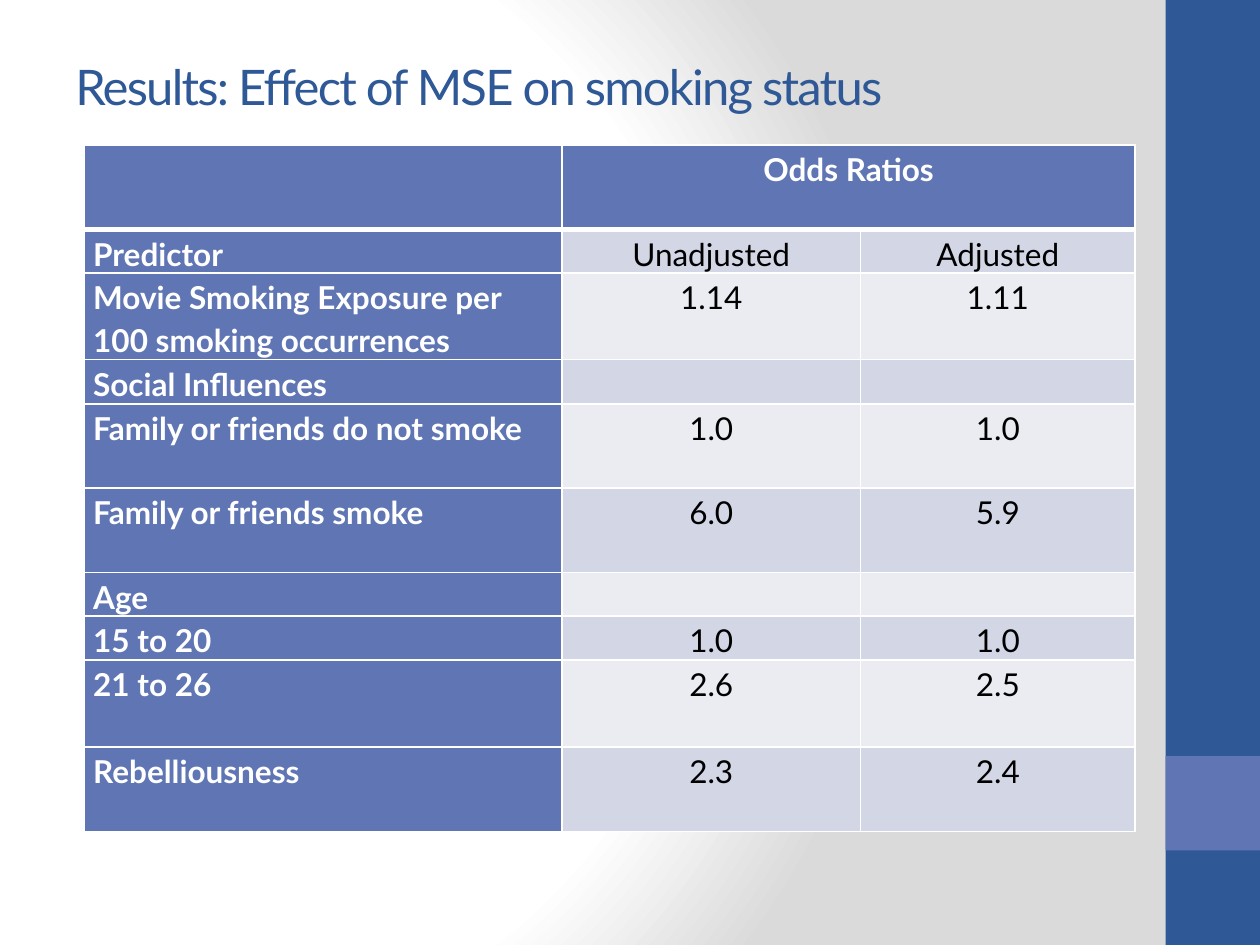
import pptx
import pptx.dml.color
import pptx.enum.shapes
import pptx.enum.text
import pptx.oxml
import pptx.oxml.ns
import pptx.util

Inches = pptx.util.Inches
ALIGN = pptx.enum.text.PP_ALIGN
NAMESPACES = pptx.oxml.ns.nsdecls("a", "p")
FONT = "Lato"
COLORS = {
    "navy": "2F5897",
    "blue": "6076B4",
    "band_dark": "D2D6E5",
    "band_light": "EAECF2",
    "white": "FFFFFF",
    "gray": "DADADA",
    "black": "000000",
}

COLUMN_WIDTHS = [3.79, 2.37, 2.18]
ROW_HEIGHTS = [0.67, 0.34, 0.69, 0.35, 0.67, 0.67, 0.34, 0.35, 0.69, 0.67]
ODDS_RATIOS = [
    ("", "Odds Ratios", ""),
    ("Predictor", "Unadjusted", "Adjusted"),
    ("Movie Smoking Exposure per 100 smoking occurrences", "1.14", "1.11"),
    ("Social Influences", "", ""),
    ("Family or friends do not smoke", "1.0", "1.0"),
    ("Family or friends smoke", "6.0", "5.9"),
    ("Age", "", ""),
    ("15 to 20", "1.0", "1.0"),
    ("21 to 26", "2.6", "2.5"),
    ("Rebelliousness", "2.3", "2.4"),
]


def rgb(name):
    return pptx.dml.color.RGBColor.from_string(COLORS[name])


def write_text(frame, text, size=18, color="black", bold=False, align=ALIGN.LEFT,
               line_spacing=None, tracking=None):
    """Fill the first paragraph; tracking is in hundredths of a point."""
    paragraph = frame.paragraphs[0]
    paragraph.alignment = align
    if line_spacing:
        paragraph.line_spacing = line_spacing
    run = paragraph.add_run()
    run.text = text
    run.font.name = FONT
    run.font.size = pptx.util.Pt(size)
    run.font.bold = bold
    run.font.color.rgb = rgb(color)
    if tracking:
        run.font._element.set("spc", str(tracking))


def set_borders(cell, top=1, bottom=1):
    """Draw white borders, with widths in points."""
    properties = cell._tc.get_or_add_tcPr()
    for side, width in {"L": 1, "R": 1, "T": top, "B": bottom}.items():
        properties.append(pptx.oxml.parse_xml(
            f'<a:ln{side} {NAMESPACES} w="{pptx.util.Pt(width)}"><a:solidFill>'
            f'<a:srgbClr val="{COLORS["white"]}"/></a:solidFill></a:ln{side}>'))


class SlideBuilder:
    def __init__(self, slide):
        self.slide = slide

    def add_background(self):
        stops = "".join(
            f'<a:gs pos="{position * 1000}"><a:srgbClr val="{COLORS[color]}"/></a:gs>'
            for position, color in [(0, "white"), (75, "white"), (100, "gray")])
        self.slide.element.cSld.insert(0, pptx.oxml.parse_xml(
            f'<p:bg {NAMESPACES}><p:bgPr><a:gradFill rotWithShape="1">'
            f'<a:gsLst>{stops}</a:gsLst><a:path path="circle">'
            '<a:fillToRect l="20000" t="50000" r="100000" b="50000"/></a:path>'
            '</a:gradFill><a:effectLst/></p:bgPr></p:bg>'))

    def add_block(self, left, top, width, height, color):
        block = self.slide.shapes.add_shape(
            pptx.enum.shapes.MSO_SHAPE.RECTANGLE,
            Inches(left), Inches(top), Inches(width), Inches(height))
        block.shadow.inherit = False
        block.fill.solid()
        block.fill.fore_color.rgb = rgb(color)
        block.line.fill.background()

    def add_title(self, left, top, width, height, text):
        box = self.slide.shapes.add_textbox(
            Inches(left), Inches(top), Inches(width), Inches(height))
        box.text_frame.word_wrap = True
        box.text_frame.vertical_anchor = pptx.enum.text.MSO_ANCHOR.MIDDLE
        write_text(box.text_frame, text, size=28, color="navy", tracking=-100)

    def add_table(self, left, top, rows):
        table = self.slide.shapes.add_table(
            len(rows), len(COLUMN_WIDTHS), Inches(left), Inches(top),
            Inches(sum(COLUMN_WIDTHS)), Inches(sum(ROW_HEIGHTS))).table
        table.horz_banding = table.first_row = False
        for column, width in zip(table.columns, COLUMN_WIDTHS):
            column.width = Inches(width)
        for row, height in zip(table.rows, ROW_HEIGHTS):
            row.height = Inches(height)
        for row_index, row in enumerate(rows):
            for column_index, text in enumerate(row):
                self.fill_cell(table.cell(row_index, column_index),
                               row_index, column_index, text)
        table.cell(0, 1).merge(table.cell(0, 2))

    def fill_cell(self, cell, row_index, column_index, text):
        heading = row_index == 0 or column_index == 0
        band = "band_dark" if row_index % 2 else "band_light"
        set_borders(cell, top=3 if row_index == 1 else 1,
                    bottom=3 if row_index == 0 else 1)
        cell.fill.solid()
        cell.fill.fore_color.rgb = rgb("blue" if heading else band)
        cell.margin_left = cell.margin_right = Inches(0.07)
        cell.margin_top = cell.margin_bottom = 0
        write_text(cell.text_frame, text, bold=heading, line_spacing=1.15,
                   color="white" if heading else "black",
                   align=ALIGN.CENTER if column_index else ALIGN.LEFT)


def main():
    presentation = pptx.Presentation()
    presentation.slide_width = Inches(10)
    presentation.slide_height = Inches(7.5)
    builder = SlideBuilder(presentation.slides.add_slide(presentation.slide_layouts[6]))
    builder.add_background()
    builder.add_block(9.25, 0, 0.75, 7.5, "navy")
    builder.add_block(9.25, 6, 0.75, 0.75, "blue")
    builder.add_title(0.5, 0.3, 8.33, 0.77, "Results: Effect of MSE on smoking status")
    builder.add_table(0.67, 1.15, ODDS_RATIOS)
    presentation.save("out.pptx")


if __name__ == "__main__":
    main()
